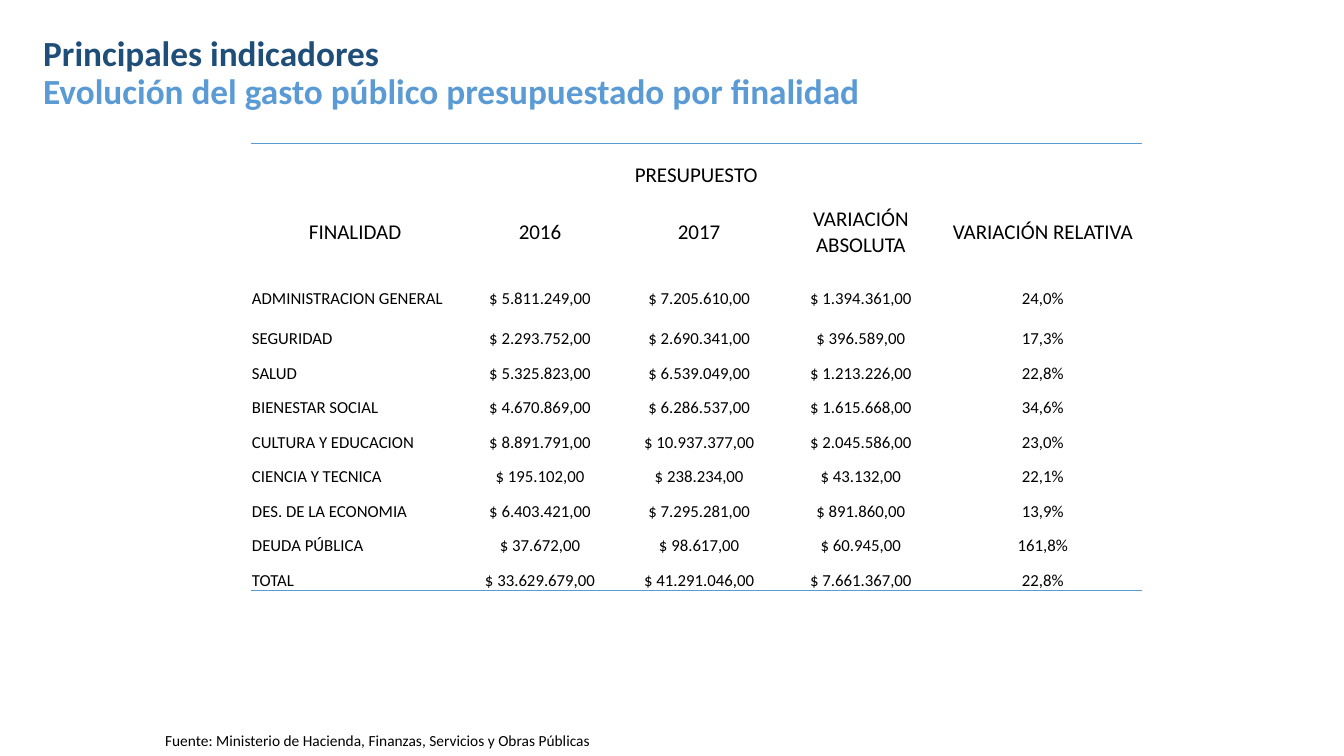
from lxml.etree import SubElement
from pptx import Presentation
from pptx.dml.color import RGBColor
from pptx.enum.text import MSO_ANCHOR, PP_ALIGN
from pptx.oxml.ns import qn
from pptx.util import Cm, Pt

HEADING = [("Principales indicadores", "navy"),
           ("Evolución del gasto público presupuestado por finalidad", "blue")]
SOURCE = "Fuente: Ministerio de Hacienda, Finanzas, Servicios y Obras Públicas"
BUDGET = [
    ("PRESUPUESTO", "", "", "", ""),
    ("FINALIDAD", "2016", "2017", "VARIACIÓN ABSOLUTA", "VARIACIÓN RELATIVA"),
    ("ADMINISTRACION GENERAL", "$ 5.811.249,00", "$ 7.205.610,00", "$ 1.394.361,00", "24,0%"),
    ("SEGURIDAD", "$ 2.293.752,00", "$ 2.690.341,00", "$ 396.589,00", "17,3%"),
    ("SALUD", "$ 5.325.823,00", "$ 6.539.049,00", "$ 1.213.226,00", "22,8%"),
    ("BIENESTAR SOCIAL", "$ 4.670.869,00", "$ 6.286.537,00", "$ 1.615.668,00", "34,6%"),
    ("CULTURA Y EDUCACION", "$ 8.891.791,00", "$ 10.937.377,00", "$ 2.045.586,00", "23,0%"),
    ("CIENCIA Y TECNICA", "$ 195.102,00", "$ 238.234,00", "$ 43.132,00", "22,1%"),
    ("DES. DE LA ECONOMIA", "$ 6.403.421,00", "$ 7.295.281,00", "$ 891.860,00", "13,9%"),
    ("DEUDA PÚBLICA", "$ 37.672,00", "$ 98.617,00", "$ 60.945,00", "161,8%"),
    ("TOTAL", "$ 33.629.679,00", "$ 41.291.046,00", "$ 7.661.367,00", "22,8%"),
]
COLORS = {"navy": "1F4E79", "blue": "5B9BD5", "black": "000000"}
FONT = "Calibri"
COLUMN_WIDTHS = [5.26, 4.06, 3.96, 4.19, 4.98]
ROW_HEIGHTS = [1.14, 2.18, 0.87, 1] + [0.87] * 7
HEADER_ROWS = 2
PLAIN_TABLE_STYLE = "{2D5ABB26-0587-4C30-8999-92F81FD0307C}"


def style_font(font, size, color, bold=False):
    font.name = FONT
    font.size = Pt(size)
    font.bold = bold
    font.color.rgb = RGBColor.from_string(COLORS[color])


def add_text_frame(slide, left, top, width, height, anchor):
    frame = slide.shapes.add_textbox(Cm(left), Cm(top), Cm(width), Cm(height)).text_frame
    frame.word_wrap = True
    frame.vertical_anchor = anchor
    return frame


def add_border(cell, side):
    border = SubElement(cell._tc.get_or_add_tcPr(), qn(f"a:{side}"), w=str(Pt(1)))
    fill = SubElement(border, qn("a:solidFill"))
    SubElement(fill, qn("a:srgbClr"), val=COLORS["blue"])


def fill_cell(cell, text, row, column):
    cell.margin_left = cell.margin_right = cell.margin_top = Cm(0.03)
    cell.margin_bottom = 0
    cell.vertical_anchor = MSO_ANCHOR.MIDDLE if row == 1 else MSO_ANCHOR.BOTTOM
    if row == 0:
        add_border(cell, "lnT")
    elif row == len(BUDGET) - 1:
        add_border(cell, "lnB")
    cell.fill.background()
    cell.text = text
    paragraph = cell.text_frame.paragraphs[0]
    is_label = row >= HEADER_ROWS and column == 0
    paragraph.alignment = PP_ALIGN.LEFT if is_label else PP_ALIGN.CENTER
    style_font(paragraph.font, 15 if row < HEADER_ROWS else 12, "black")


def add_budget_table(slide):
    budget = slide.shapes.add_table(
        len(BUDGET), len(COLUMN_WIDTHS), Cm(6.32), Cm(3.61),
        Cm(sum(COLUMN_WIDTHS)), Cm(sum(ROW_HEIGHTS))).table
    budget.first_row = budget.horz_banding = False
    budget._tbl.tblPr.find(qn("a:tableStyleId")).text = PLAIN_TABLE_STYLE
    for column, width in zip(budget.columns, COLUMN_WIDTHS):
        column.width = Cm(width)
    for row, height in zip(budget.rows, ROW_HEIGHTS):
        row.height = Cm(height)
    for r, values in enumerate(BUDGET):
        for c, value in enumerate(values):
            fill_cell(budget.cell(r, c), value, r, c)
    budget.cell(0, 0).merge(budget.cell(0, len(COLUMN_WIDTHS) - 1))


def add_heading(slide):
    frame = add_text_frame(slide, 0.84, 0.74, 31.45, 2.21, MSO_ANCHOR.BOTTOM)
    paragraph = frame.paragraphs[0]
    paragraph.line_spacing = 0.9
    for index, (line, color) in enumerate(HEADING):
        if index:
            paragraph.add_line_break()
        run = paragraph.add_run()
        run.text = line
        style_font(run.font, 25.2, color, bold=True)


def add_source(slide):
    frame = add_text_frame(slide, 3.91, 18.29, 19.18, 0.74, MSO_ANCHOR.TOP)
    frame.text = SOURCE
    style_font(frame.paragraphs[0].font, 11, "black")


def main():
    presentation = Presentation()
    presentation.slide_width = Cm(33.87)
    presentation.slide_height = Cm(19.05)
    slide = presentation.slides.add_slide(presentation.slide_layouts[6])
    add_source(slide)
    add_budget_table(slide)
    add_heading(slide)
    presentation.save("out.pptx")


if __name__ == "__main__":
    main()
